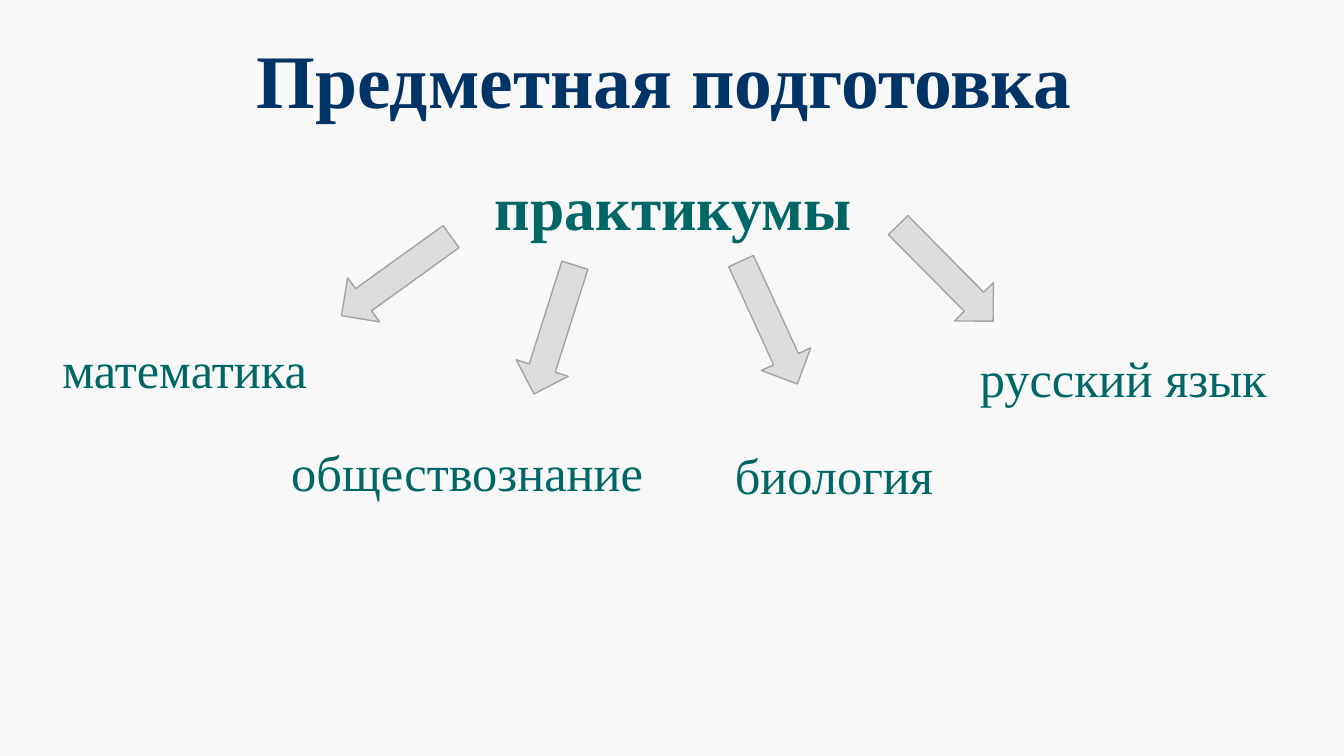
from dataclasses import dataclass

from pptx import Presentation
from pptx.dml.color import RGBColor as RGB
from pptx.enum.shapes import MSO_SHAPE as Shape
from pptx.enum.text import MSO_ANCHOR as Anchor, MSO_AUTO_SIZE as AutoSize, PP_ALIGN as Align
from pptx.util import Inches, Pt


@dataclass(frozen=True)
class Theme:
    font: str = "Times New Roman"
    background: RGB = RGB(0xF8, 0xF8, 0xF8)
    title: RGB = RGB(0x00, 0x33, 0x66)
    text: RGB = RGB(0x00, 0x66, 0x66)
    arrow: RGB = RGB(0xDD, 0xDD, 0xDD)
    outline: RGB = RGB(0xA3, 0xA3, 0xA3)
    title_size: int = 54
    heading_size: int = 44
    subject_size: int = 36


class SlideBuilder:
    """Places elements by percent of the slide's width and height."""

    def __init__(self, prs, theme):
        self.prs, self.theme = prs, theme
        self.s = prs.slides.add_slide(prs.slide_layouts[5])
        fill = self.s.background.fill
        fill.solid()
        fill.fore_color.rgb = theme.background

    def box(self, x, y, w, h):
        across, down = self.prs.slide_width / 100, self.prs.slide_height / 100
        return [round(n) for n in (x * across, y * down, w * across, h * down)]

    def set_text(self, tf, text, size, color, bold=False, align=Align.LEFT):
        p = tf.paragraphs[0]
        p.text = text
        p.alignment = align
        p.font.name, p.font.size, p.font.bold = self.theme.font, Pt(size), bold
        p.font.color.rgb = color
        return p

    def title(self, text, *area):
        sp = self.s.shapes.title
        sp.left, sp.top, sp.width, sp.height = self.box(*area)
        tf = sp.text_frame
        tf.vertical_anchor = Anchor.MIDDLE
        p = self.set_text(tf, text, self.theme.title_size, self.theme.title, True, Align.CENTER)
        p.line_spacing = 0.9

    def label(self, text, size, *area, wrap=True, **style):
        tf = self.s.shapes.add_textbox(*self.box(*area)).text_frame
        tf.word_wrap = wrap
        tf.auto_size = AutoSize.SHAPE_TO_FIT_TEXT
        self.set_text(tf, text, size, self.theme.text, **style)

    def arrow(self, x, y, angle):
        sp = self.s.shapes.add_shape(Shape.DOWN_ARROW, *self.box(x, y, 4.05, 17.87))
        sp.rotation = angle
        sp.shadow.inherit = False
        sp.fill.solid()
        sp.fill.fore_color.rgb = self.theme.arrow
        sp.line.color.rgb = self.theme.outline
        sp.line.width = Pt(1)


def main():
    prs = Presentation()
    prs.slide_width, prs.slide_height = Inches(13.33), Inches(7.5)
    theme = Theme()
    slide = SlideBuilder(prs, theme)

    # Title and heading
    slide.title("Предметная подготовка ", 6.98, 1.47, 86.27, 19.33)
    slide.label("практикумы", theme.heading_size, 35.93, 21.73, 28.36, 11.2,
                wrap=False, bold=True, align=Align.CENTER)

    # Subjects: text, left, top, width
    for subject, x, y, w in (
        ("математика", 3.9, 44.13, 23.03),
        ("русский язык", 72.17, 45.2, 23.03),
        ("биология", 53.94, 58.13, 23.03),
        ("обществознание", 20.93, 57.73, 31.58),
    ):
        slide.label(subject, theme.subject_size, x, y, w, 9.47)

    # Arrows from the heading to the subjects: left, top, angle
    for x, y, angle in (
        (27.46, 27.6, 54.2),
        (39.23, 34.67, 17.6),
        (55.21, 33.73, 335.4),
        (68.34, 27.2, 315.3),
    ):
        slide.arrow(x, y, angle)

    prs.save("out.pptx")


if __name__ == "__main__":
    main()
